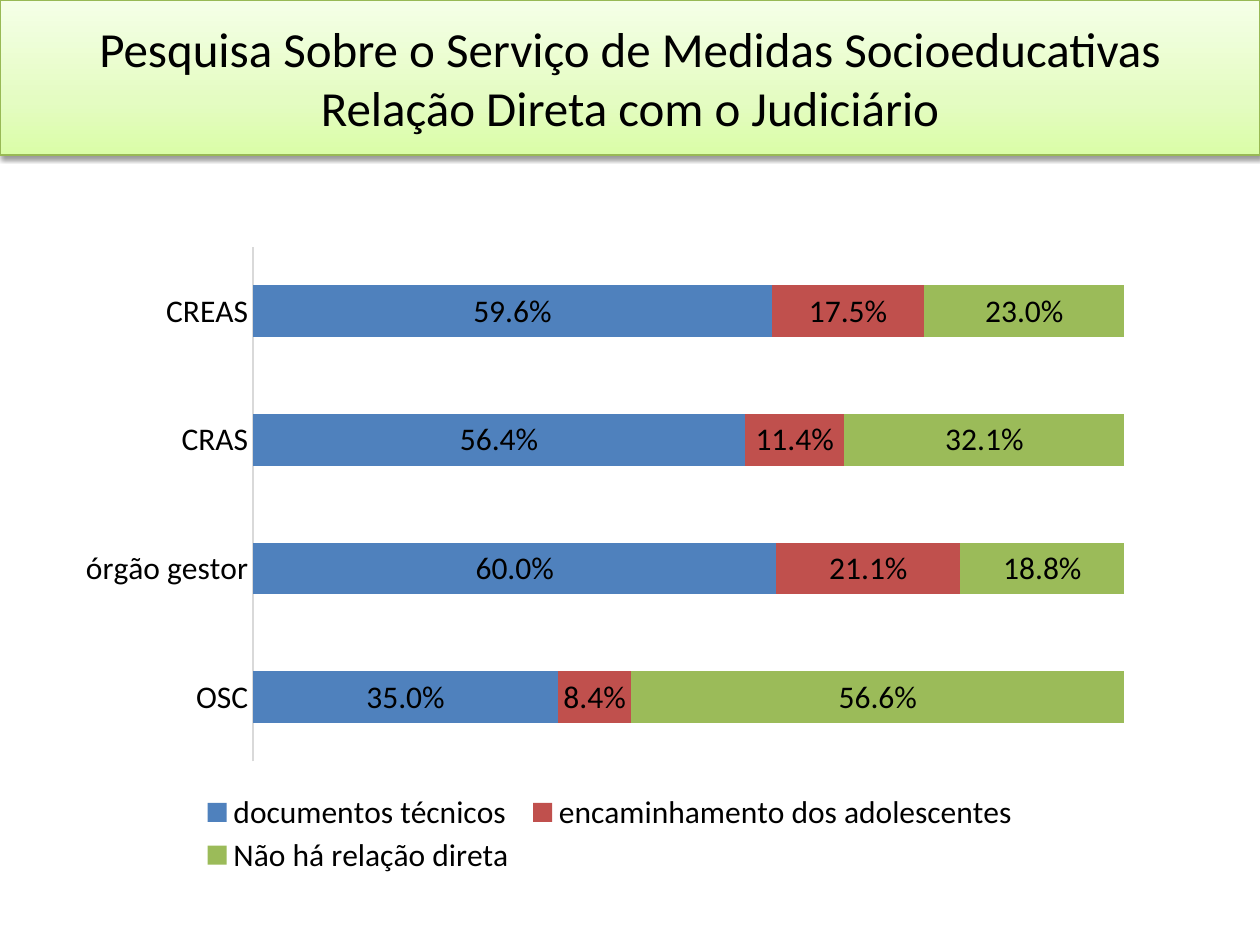
"""Build the slide on how socio-educational services relate to the judiciary."""
from copy import deepcopy
from lxml import etree
from pptx import Presentation
from pptx import util as u
from pptx.chart import data as cd
from pptx.dml.color import RGBColor
from pptx.enum import chart as ch, text
from pptx.oxml import ns

PX = 914400 / 126
BLACK = RGBColor(0x00, 0x00, 0x00)
GREEN_LINE = RGBColor(0x98, 0xB9, 0x55)
AXIS_GREY = RGBColor(0xD9, 0xD9, 0xD9)
BANNER = [(0, RGBColor(0xDA, 0xFD, 0xA7)), (0.35, RGBColor(0xE4, 0xFC, 0xC2)),
          (1, RGBColor(0xF5, 0xFF, 0xE7))]
SERIES = [
    ("documentos técnicos", (0.35, 0.6, 0.564, 0.596), RGBColor(0x4F, 0x81, 0xBD)),
    ("encaminhamento dos adolescentes", (0.084, 0.211, 0.114, 0.175), RGBColor(0xC0, 0x50, 0x4D)),
    ("Não há relação direta", (0.566, 0.188, 0.321, 0.23), RGBColor(0x9B, 0xBB, 0x59)),
]


def style(font, size):
    font.name, font.size = "Calibri", u.Pt(size)
    font.color.rgb = BLACK


def place(el, index, **layout):
    for old in el.findall(ns.qn("c:layout")):
        el.remove(old)
    box = etree.Element(ns.qn("c:layout"))
    manual = etree.SubElement(box, ns.qn("c:manualLayout"))
    for name, val in layout.items():
        etree.SubElement(manual, ns.qn(f"c:{name}"), val=str(val))
    el.insert(index, box)


prs = Presentation()
prs.slide_width, prs.slide_height = u.Inches(10), u.Inches(7.5)
s = prs.slides.add_slide(prs.slide_layouts[5])

title = s.shapes.title
title.left, title.top, title.width, title.height = 0, 0, prs.slide_width, round(155 * PX)
title.fill.gradient()
title.fill.gradient_angle = 90
stops = title.element.spPr.find(".//" + ns.qn("a:gsLst"))
stops.insert(1, deepcopy(stops[0]))
for stop, (position, color) in zip(title.fill.gradient_stops, BANNER):
    stop.position = position
    stop.color.rgb = color
title.line.color.rgb = GREEN_LINE
title.line.width = u.Pt(0.75)
title.shadow.inherit = False
effects = title.element.spPr.find(ns.qn("a:effectLst"))
shadow = etree.SubElement(effects, ns.qn("a:outerShdw"), blurRad=str(u.Pt(3.1)),
                          dist=str(u.Pt(1.6)), dir="5400000", rotWithShape="0")
shade = etree.SubElement(shadow, ns.qn("a:srgbClr"), val=str(BLACK))
etree.SubElement(shade, ns.qn("a:alpha"), val="38000")

tf = title.text_frame
tf.text = "Pesquisa Sobre o Serviço de Medidas Socioeducativas\vRelação Direta com o Judiciário"
tf.auto_size = text.MSO_AUTO_SIZE.NONE
tf.vertical_anchor = text.MSO_ANCHOR.MIDDLE
p = tf.paragraphs[0]
p.alignment = text.PP_ALIGN.CENTER
for r in p.runs:
    style(r.font, 28)

data = cd.CategoryChartData(number_format="0.0%")
data.categories = ["OSC", "órgão gestor", "CRAS", "CREAS"]
for name, values, color in SERIES:
    data.add_series(name, values)
box = [round(n * PX) for n in (64, 234, 1081, 645)]
chart = s.shapes.add_chart(ch.XL_CHART_TYPE.BAR_STACKED_100, *box, data).chart
style(chart.font, 18)
chart.has_title = False

plot = chart.plots[0]
plot.gap_width, plot.overlap, plot.vary_by_categories = 150, 100, False
for series, (name, values, color) in zip(plot.series, SERIES):
    series.format.fill.solid()
    series.format.fill.fore_color.rgb = color
    labels = series.data_labels
    labels.show_value = True
    labels.number_format, labels.number_format_is_linked = "0.0%", False
    style(labels.font, 18)

axis = chart.category_axis
axis.major_tick_mark = axis.minor_tick_mark = ch.XL_TICK_MARK.NONE
axis.format.line.color.rgb = AXIS_GREY
axis.format.line.width = u.Pt(0.75)
style(axis.tick_labels.font, 18)
chart.value_axis.visible = False
chart.value_axis.has_major_gridlines = False
chart.value_axis.maximum_scale = 1
chart.value_axis.tick_labels.number_format = "0.0%"
chart.value_axis.tick_labels.number_format_is_linked = False

chart.has_legend = True
legend = chart.legend
legend.position = ch.XL_LEGEND_POSITION.BOTTOM
legend.include_in_layout = False
style(legend.font, 18)
area = chart.element.find(".//" + ns.qn("c:plotArea"))
place(area, 0, layoutTarget="inner", xMode="edge", yMode="edge", x=0.175, y=0.02, w=0.806, h=0.798)
place(chart.element.find(".//" + ns.qn("c:legend")), 1,
      xMode="edge", yMode="edge", x=0.12, y=0.86, w=0.77, h=0.14)

prs.save("out.pptx")
